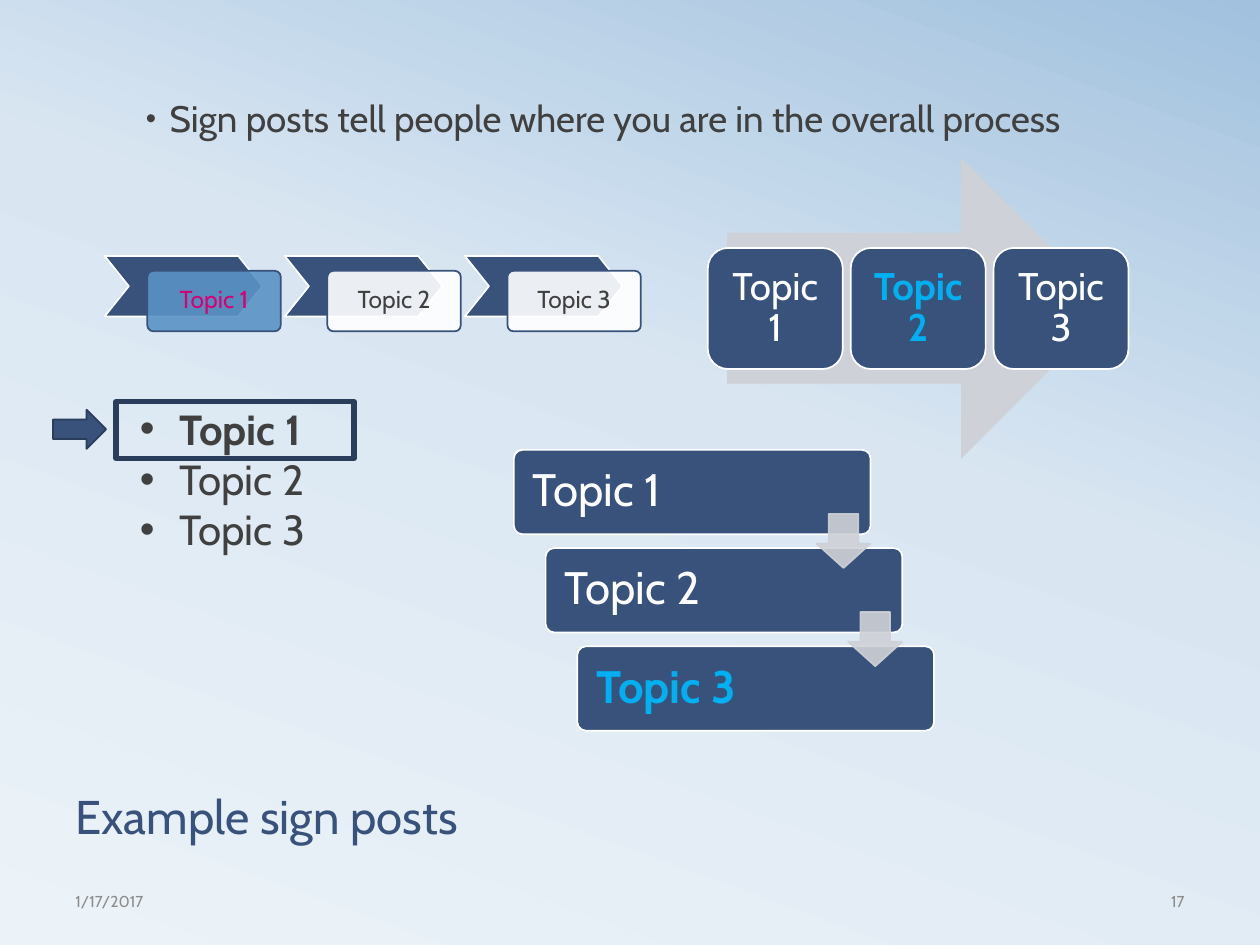
import copy

import pptx
import pptx.dml.color
import pptx.enum.shapes
import pptx.enum.text
import pptx.oxml.ns
import pptx.oxml.xmlchemy
import pptx.util
from pptx.util import Cm

FONT = "Cabin"
TOPICS = ["Topic 1", "Topic 2", "Topic 3"]
COLORS = {
    "navy": "39527B", "edge": "2A3D5B", "white": "FFFFFF", "text": "404040",
    "gray": "8C8C8C", "silver": "CED1D7", "blue": "5A92C5",
    "pink": "D70074", "cyan": "00B0F0",
}
BACKGROUND = [(0, "ECF3F8"), (0.58, "D9E6F2"), (1, "A1C1DE")]
KINDS = pptx.enum.shapes.MSO_SHAPE
ALIGN = pptx.enum.text.PP_ALIGN
ANCHOR = pptx.enum.text.MSO_ANCHOR


def rgb(name):
    """Return the named colour."""
    return pptx.dml.color.RGBColor.from_string(COLORS[name])


def paint_background(page):
    """Give the page its three-stop gradient."""
    fill = page.background.fill
    fill.gradient()
    fill.gradient_angle = 70
    stops = next(page.element.iter(pptx.oxml.ns.qn("a:gsLst")))
    stops.append(copy.deepcopy(stops[0]))
    for stop, (position, color) in zip(fill.gradient_stops, BACKGROUND):
        stop.position = position
        stop.color.rgb = pptx.dml.color.RGBColor.from_string(color)


def add_bullet(para, indent, percent):
    """Set a hanging bullet of the given relative size."""
    properties = para._p.get_or_add_pPr()
    properties.set("marL", str(indent))
    properties.set("indent", str(-indent))
    for tag, name, value in (("buSzPct", "val", str(percent * 1000)),
                             ("buFont", "typeface", "Arial"),
                             ("buChar", "char", "•")):
        item = pptx.oxml.xmlchemy.OxmlElement(f"a:{tag}")
        item.set(name, value)
        properties.append(item)


def write(para, text, size, color, bold=False, align=ALIGN.LEFT, spacing=None):
    """Add one formatted run to a paragraph."""
    para.alignment = align
    para.line_spacing = spacing
    span = para.add_run()
    span.text = text
    span.font.name = FONT
    span.font.size = pptx.util.Pt(size)
    span.font.bold = bold
    span.font.color.rgb = rgb(color)


def add_text_box(page, place, anchor=ANCHOR.TOP):
    """Add a wrapping text box and return its frame."""
    frame = page.shapes.add_textbox(*map(Cm, place)).text_frame
    frame.word_wrap = True
    frame.vertical_anchor = anchor
    return frame


def add_shape(shapes, kind, place, fill=None, line=None, width=1,
              adjust=(), opacity=100):
    """Add a flat preset shape."""
    shape = shapes.add_shape(kind, *map(Cm, place))
    shape.shadow.inherit = False
    for index, value in enumerate(adjust):
        shape.adjustments[index] = value
    if fill:
        shape.fill.solid()
        shape.fill.fore_color.rgb = rgb(fill)
    else:
        shape.fill.background()
    if line:
        shape.line.color.rgb = rgb(line)
        shape.line.width = pptx.util.Pt(width)
    else:
        shape.line.fill.background()
    if opacity < 100:
        add_opacity(shape, fill, opacity)
    return shape


def add_opacity(shape, color, opacity):
    """Make every use of one colour in a shape partly transparent."""
    for item in shape.element.spPr.iter(pptx.oxml.ns.qn("a:srgbClr")):
        if item.get("val") == COLORS[color]:
            alpha = pptx.oxml.xmlchemy.OxmlElement("a:alpha")
            alpha.set("val", str(opacity * 1000))
            item.append(alpha)


def label(shape, text, size, color, inset, bold=False, align=ALIGN.CENTER):
    """Write a topic inside a shape."""
    frame = shape.text_frame
    frame.word_wrap = True
    frame.vertical_anchor = ANCHOR.MIDDLE
    frame.margin_left = frame.margin_right = Cm(inset)
    frame.margin_top = frame.margin_bottom = Cm(inset)
    write(frame.paragraphs[0], text, size, color, bold, align, 0.9)


def add_chevrons(page):
    """Draw the chevron process with the first topic marked."""
    shapes = page.shapes.add_group_shape().shapes
    for index, topic in enumerate(TOPICS):
        shift = 3.63 * index
        active = index == 0
        add_shape(shapes, KINDS.CHEVRON, (2.11 + shift, 5.16, 3.18, 1.22),
                  "navy", "white", adjust=[0.4])
        card = add_shape(shapes, KINDS.ROUNDED_RECTANGLE,
                         (2.97 + shift, 5.46, 2.69, 1.22),
                         "blue" if active else "white", "navy",
                         adjust=[0.1], opacity=90)
        label(card, topic, 14, "pink" if active else "text", 0.32)


def add_arrow_tiles(page):
    """Draw the tiles on a wide arrow with the second topic marked."""
    shapes = page.shapes.add_group_shape().shapes
    add_shape(shapes, KINDS.RIGHT_ARROW, (14.66, 3.18, 7.75, 6.07), "silver")
    for index, topic in enumerate(TOPICS):
        active = index == 1
        tile = add_shape(shapes, KINDS.ROUNDED_RECTANGLE,
                         (14.27 + 2.88 * index, 5, 2.72, 2.44), "navy", "white")
        label(tile, topic, 22, "cyan" if active else "white", 0.23, active)


def add_topic_list(page):
    """Write the bulleted topics with a pointer and frame on the first."""
    frame = add_text_box(page, (2.57, 8, 4.57, 3.33))
    for index, topic in enumerate(TOPICS):
        para = frame.add_paragraph() if index else frame.paragraphs[0]
        add_bullet(para, Cm(0.79), 100)
        write(para, topic, 24, "text", bold=index == 0)
    add_shape(page.shapes, KINDS.RIGHT_ARROW, (1.07, 8.26, 1.07, 0.79),
              "navy", "edge")
    add_shape(page.shapes, KINDS.RECTANGLE, (2.34, 8.1, 4.8, 1.14),
              line="edge", width=3)


def add_stairs(page):
    """Draw the descending steps with the last topic marked."""
    shapes = page.shapes.add_group_shape().shapes
    right, down = 0.64, 1.98
    for index, topic in enumerate(TOPICS):
        active = index == 2
        step = add_shape(shapes, KINDS.ROUNDED_RECTANGLE,
                         (10.36 + right * index, 9.07 + down * index, 7.19, 1.7),
                         "navy", "white", adjust=[0.1])
        label(step, topic, 26, "cyan" if active else "white", 0.33, active,
              ALIGN.LEFT)
    for index in range(len(TOPICS) - 1):
        add_shape(shapes, KINDS.DOWN_ARROW,
                  (16.46 + right * index, 10.36 + down * index, 1.09, 1.09),
                  "silver", "silver", adjust=[0.55, 0.45], opacity=90)


def add_title(page, text):
    """Place and write the title."""
    title = page.shapes.title
    title.left, title.top, title.width, title.height = map(
        Cm, (1.27, 14.17, 22.86, 2.97))
    title.text_frame.vertical_anchor = ANCHOR.BOTTOM
    write(title.text_frame.paragraphs[0], text, 27, "navy", spacing=0.8)


def add_intro(page, text):
    """Write the bulleted statement at the top."""
    para = add_text_box(page, (2.69, 1.9, 21.44, 11.63)).paragraphs[0]
    add_bullet(para, Cm(0.48), 80)
    write(para, text, 21, "text", spacing=0.9)


def add_footer(page, text, left, align):
    """Write one footer entry."""
    frame = add_text_box(page, (left, 17.65, 5.92, 1.02), ANCHOR.MIDDLE)
    write(frame.paragraphs[0], text, 9, "gray", align=align)


def main():
    """Build and save the slide."""
    deck = pptx.Presentation()
    deck.slide_width, deck.slide_height = Cm(25.4), Cm(19.05)
    page = deck.slides.add_slide(deck.slide_layouts[5])
    paint_background(page)
    add_title(page, "Example sign posts")
    add_intro(page, "Sign posts tell people where you are in the overall process")
    add_footer(page, "1/17/2017", 1.27, ALIGN.LEFT)
    add_footer(page, "17", 18.21, ALIGN.RIGHT)
    add_chevrons(page)
    add_arrow_tiles(page)
    add_topic_list(page)
    add_stairs(page)
    deck.save("out.pptx")


if __name__ == "__main__":
    main()
